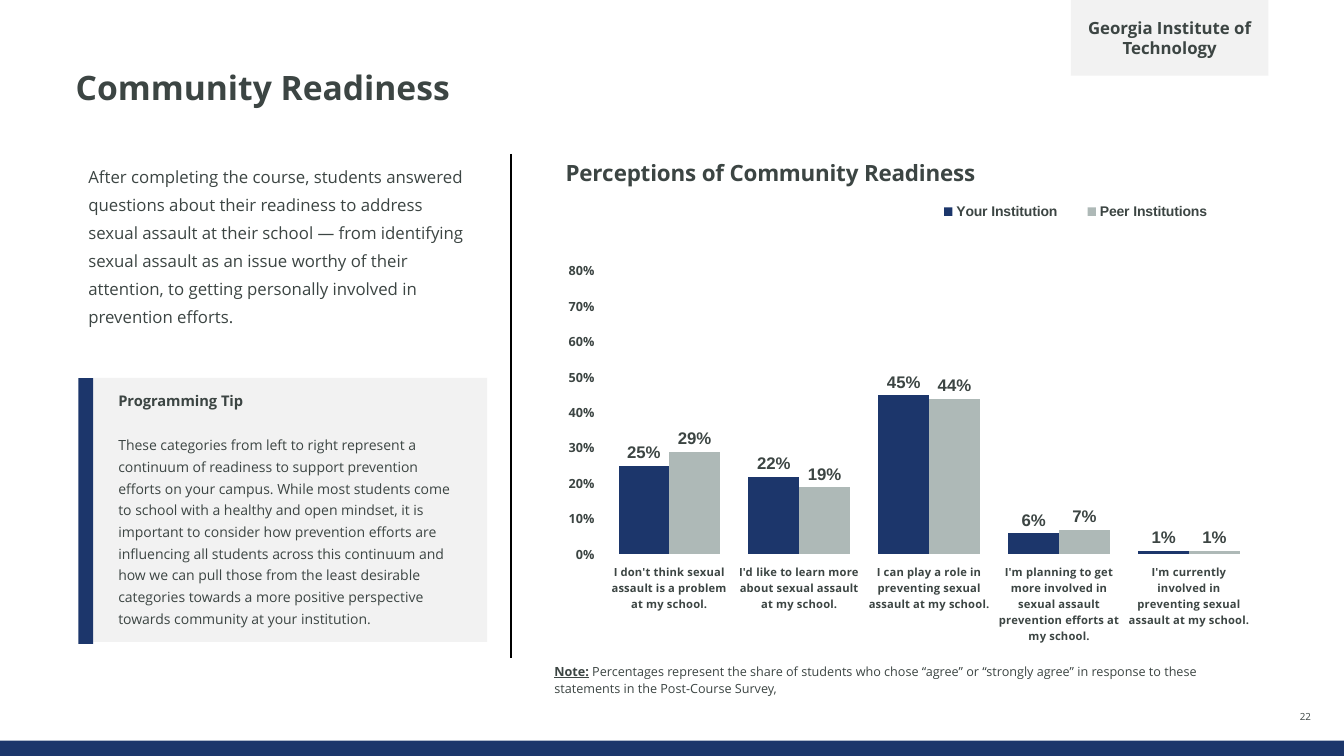
from lxml import etree
from pptx import Presentation
from pptx.chart.data import CategoryChartData
from pptx.dml.color import RGBColor
from pptx.enum.chart import XL_CHART_TYPE as ChartType, XL_LABEL_POSITION as LabelPosition
from pptx.enum.chart import XL_LEGEND_POSITION as LegendPosition
from pptx.enum.shapes import MSO_CONNECTOR as Connector, MSO_SHAPE as Shape
from pptx.enum.text import MSO_ANCHOR as Anchor, MSO_AUTO_SIZE as AutoSize, PP_ALIGN as Align
from pptx.oxml import parse_xml
from pptx.oxml.ns import nsdecls, qn
from pptx.util import Pt

NAVY = RGBColor(0x1C, 0x36, 0x6B)
SAGE = RGBColor(0xAE, 0xB9, 0xB7)
PALE = RGBColor(0xF2, 0xF2, 0xF2)
INK = RGBColor(0x3C, 0x45, 0x43)
BLACK = RGBColor(0, 0, 0)

TITLE = "Community Readiness"
INTRO = ("After completing the course, students answered questions about their readiness to "
         "address sexual assault at their school — from identifying sexual assault as an issue "
         "worthy of their attention, to getting personally involved in prevention efforts.")
TIP = ("These categories from left to right represent a continuum of readiness to support "
       "prevention efforts on your campus. While most students come to school with a healthy "
       "and open mindset, it is important to consider how prevention efforts are influencing "
       "all students across this continuum and how we can pull those from the least desirable "
       "categories towards a more positive perspective towards community at your institution.")
NOTE = ("Percentages represent the share of students who chose “agree” or “strongly agree” in "
        "response to these statements in the Post-Course Survey,")
CATEGORIES = [
    "I don't think sexual assault is a problem at my school.",
    "I'd like to learn more about sexual assault at my school.",
    "I can play a role in preventing sexual assault at my school.",
    "I'm planning to get more involved in sexual assault prevention efforts at my school.",
    "I'm currently involved in preventing sexual assault at my school.",
]
SERIES = [
    ("Your Institution", [0.25, 0.22, 0.45, 0.06, 0.01], NAVY),
    ("Peer Institutions", [0.29, 0.19, 0.44, 0.07, 0.01], SAGE),
]


def set_font(font, size, bold=False, name="Open Sans", underline=None):
    """Apply the slide's ink colour with the given typeface settings."""
    font.name, font.size, font.bold = name, Pt(size), bold
    font.color.rgb = INK
    if underline:
        font.underline = True


def write(paragraph, text, align=None, line=None, after=None, **font):
    """Add a formatted run of text to a paragraph."""
    run = paragraph.add_run()
    run.text = text
    set_font(run.font, **font)
    if align is not None:
        paragraph.alignment = align
    if line is not None:
        paragraph.line_spacing = line
    if after is not None:
        paragraph.space_after = Pt(after)


def prepare_frame(shape, anchor=Anchor.TOP, side=0, fit=AutoSize.NONE):
    """Set wrapping, anchor and side margins, and return the text frame."""
    frame = shape.text_frame
    frame.word_wrap = True
    frame.auto_size = fit
    frame.vertical_anchor = anchor
    frame.margin_left = frame.margin_right = Pt(side)
    frame.margin_top = frame.margin_bottom = 0
    return frame


def add_panel(slide, box, colour):
    """Add a plain filled rectangle."""
    panel = slide.shapes.add_shape(Shape.RECTANGLE, *map(Pt, box))
    panel.shadow.inherit = False
    panel.fill.solid()
    panel.fill.fore_color.rgb = colour
    panel.line.fill.background()
    return panel


def add_title(slide, box):
    """Place and format the title placeholder."""
    title = slide.shapes.title
    title.left, title.top, title.width, title.height = map(Pt, box)
    write(prepare_frame(title).paragraphs[0], TITLE, Align.LEFT, 0.9, size=24, bold=True)


def add_institution(slide, box):
    """Add the tab naming the institution."""
    frame = prepare_frame(add_panel(slide, box, PALE), Anchor.MIDDLE, 7.2)
    write(frame.paragraphs[0], "Georgia Institute of Technology", Align.CENTER,
          size=12, bold=True)


def add_intro(slide, box):
    """Add the introductory paragraph."""
    frame = prepare_frame(slide.shapes.add_textbox(*map(Pt, box)), side=7.2,
                          fit=AutoSize.SHAPE_TO_FIT_TEXT)
    frame.margin_top = frame.margin_bottom = Pt(3.6)
    write(frame.paragraphs[0], INTRO, line=Pt(20), after=2, size=12)


def add_tip(slide, box):
    """Add the programming tip with its accent bar."""
    left, top, width, height = box
    bar = 10.5
    panel = add_panel(slide, (left + bar, top, width - bar, height - 1.5), PALE)
    frame = prepare_frame(panel, Anchor.MIDDLE, 18, AutoSize.TEXT_TO_FIT_SHAPE)
    write(frame.paragraphs[0], "Programming Tip", Align.LEFT, Pt(12), 16, size=10.5, bold=True)
    write(frame.add_paragraph(), TIP, Align.LEFT, 1.3, 2, size=10)
    add_panel(slide, (left, top, bar, height), NAVY)


def add_divider(slide, left, top, height):
    """Add the vertical rule between the columns."""
    ends = map(Pt, (left, top, left, top + height))
    rule = slide.shapes.add_connector(Connector.STRAIGHT, *ends)
    rule.line.color.rgb = BLACK
    rule.line.width = Pt(1)
    etree.SubElement(rule.element.spPr, qn("a:effectLst"))


def set_layout(element, before, target=None, **values):
    """Fix the place of a chart part as shares of the chart area."""
    for old in element.findall(qn("c:layout")):
        element.remove(old)
    inner = f'<c:layoutTarget val="{target}"/>' if target else ""
    modes = "".join(f'<c:{axis}Mode val="edge"/>' for axis in "xy")
    sizes = "".join(f'<c:{key} val="{value}"/>' for key, value in values.items())
    layout = parse_xml(f'<c:layout {nsdecls("c")}><c:manualLayout>{inner}{modes}{sizes}'
                       "</c:manualLayout></c:layout>")
    if before is None:
        element.insert(0, layout)
    else:
        element.find(qn(before)).addnext(layout)


def add_readiness_chart(slide, box):
    """Add the clustered columns comparing the institution with its peers."""
    data = CategoryChartData(number_format="0%")
    data.categories = CATEGORIES
    for name, values, _ in SERIES:
        data.add_series(name, values)
    chart = slide.shapes.add_chart(ChartType.COLUMN_CLUSTERED, *map(Pt, box), data).chart
    set_font(chart.font, 8, name="Lato")

    chart.has_title = True
    write(chart.chart_title.text_frame.paragraphs[0], "Perceptions of Community Readiness",
          size=16, bold=True)
    chart.chart_title.include_in_layout = False
    set_layout(chart.chart_title.element if hasattr(chart.chart_title, "element")
               else chart.element.find(".//" + qn("c:title")), "c:tx", x=0.01, y=0.01)

    chart.has_legend = True
    chart.legend.position = LegendPosition.TOP
    chart.legend.include_in_layout = False
    set_font(chart.legend.font, 10, True, "Arial")
    set_layout(chart.element.find(".//" + qn("c:legend")), "c:legendPos",
               x=0.51, y=0.1, w=0.44, h=0.06)
    set_layout(chart.element.find(".//" + qn("c:plotArea")), None, "inner",
               x=0.07, y=0.25, w=0.91, h=0.57)

    for axis, size in ((chart.category_axis, 8), (chart.value_axis, 9)):
        axis.has_major_gridlines = False
        axis.format.line.fill.background()
        set_font(axis.tick_labels.font, size, True)
    chart.value_axis.minimum_scale, chart.value_axis.maximum_scale = 0, 0.8
    chart.value_axis.major_unit = 0.1

    plot = chart.plots[0]
    plot.gap_width, plot.overlap, plot.vary_by_categories = 56, 0, False
    for series, (_, _, colour) in zip(plot.series, SERIES):
        series.format.fill.solid()
        series.format.fill.fore_color.rgb = colour
        labels = series.data_labels
        labels.show_value = True
        labels.position = LabelPosition.OUTSIDE_END
        labels.number_format, labels.number_format_is_linked = "0%", False
        set_font(labels.font, 12, True, "Arial")


def add_note(slide, box):
    """Add the note below the chart."""
    frame = prepare_frame(slide.shapes.add_textbox(*map(Pt, box)), Anchor.BOTTOM)
    paragraph = frame.paragraphs[0]
    write(paragraph, "Note:", line=Pt(12), after=2, size=9, bold=True, underline=True)
    write(paragraph, " " + NOTE, size=9)


def add_page_number(slide, box):
    """Add the page number."""
    frame = prepare_frame(slide.shapes.add_textbox(*map(Pt, box)), Anchor.BOTTOM)
    write(frame.paragraphs[0], "22", Align.CENTER, size=7)


def main():
    """Build and save the slide."""
    presentation = Presentation()
    presentation.slide_width, presentation.slide_height = Pt(960), Pt(540)
    slide = presentation.slides.add_slide(presentation.slide_layouts[5])
    add_panel(slide, (0, 529, 960, 11), NAVY)
    add_title(slide, (54, 51, 852, 50))
    add_note(slide, (396, 470, 499, 27))
    add_page_number(slide, (914, 505, 37, 11))
    add_readiness_chart(slide, (396, 105, 510, 355))
    add_divider(slide, 365, 110, 360)
    add_intro(slide, (56, 110, 284, 127))
    add_tip(slide, (56, 270, 292, 190))
    add_institution(slide, (765, 0, 141, 54))
    presentation.save("out.pptx")


if __name__ == "__main__":
    main()
